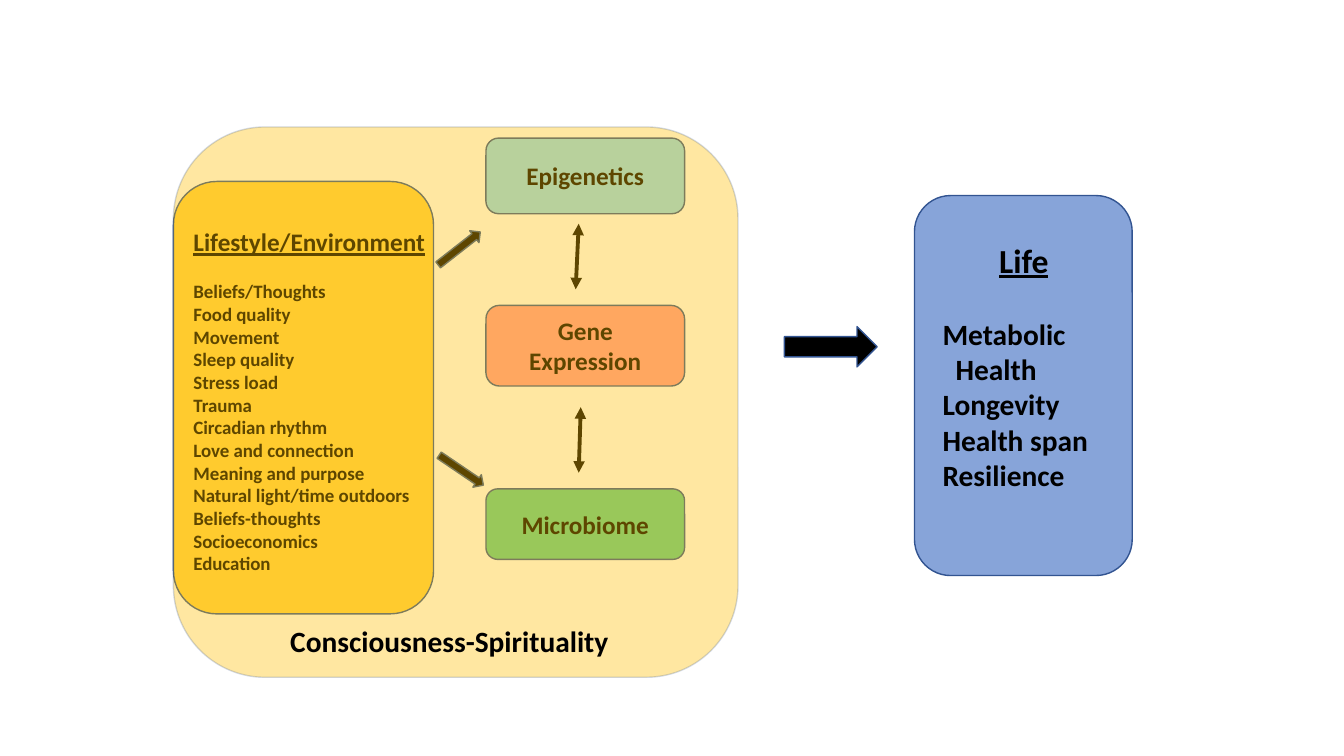
from lxml import etree
from pptx import Presentation
from pptx.dml.color import RGBColor
from pptx.enum import shapes, text
from pptx.oxml import ns
from pptx.util import Inches, Pt

BLACK = RGBColor(0, 0, 0)
NAVY = RGBColor(0x32, 0x54, 0x91)
GOLD = RGBColor(0xFF, 0xC0, 0x00)
SKY = RGBColor(0x00, 0xB0, 0xF0)
RED = RGBColor(0xFF, 0x00, 0x00)
GREEN = RGBColor(0x00, 0xB0, 0x50)
BLUE = RGBColor(0x44, 0x72, 0xC4)

HABITS = [
    "Beliefs/Thoughts", "Food quality", "Movement", "Sleep quality",
    "Stress load", "Trauma", "Circadian rhythm", "Love and connection",
    "Meaning and purpose", "Natural light/time outdoors",
    "Beliefs-thoughts", "Socioeconomics", "Education",
]
GAINS = ["Metabolic", "Health", "Longevity", "Health span", "Resilience"]
STAGES = [
    ("Epigenetics", 1.37, 0.75, SKY, 44),
    ("Gene Expression", 3.03, 0.8, RED, 40),
    ("Microbiome", 4.85, 0.7, GREEN, 63),
]
LINKS = [(5.74, 2.22, 5.71, 2.87), (5.76, 4.04, 5.74, 4.69)]
ARROWS = [
    ((4.29, 2.39, 0.53, 0.15), 322),
    ((4.31, 4.59, 0.53, 0.15), 34.1),
    ((7.78, 3.24, 0.92, 0.4), 0),
]
ROUND = shapes.MSO_SHAPE.ROUNDED_RECTANGLE
ARROW = shapes.MSO_SHAPE.RIGHT_ARROW
LEFT, MID = text.PP_ALIGN.LEFT, text.PP_ALIGN.CENTER


def fade(fill, share):
    """Set the opacity of a solid fill, in percent."""
    for color in fill._xPr.iter(ns.qn("a:srgbClr")):
        if color.getparent().getparent() is fill._xPr:
            etree.SubElement(color, ns.qn("a:alpha"), val=str(share * 1000))


def draw(slide, kind, box, color, share=100, edge=100):
    """Add a filled, outlined shape."""
    shape = slide.shapes.add_shape(kind, *map(Inches, box))
    shape.shadow.inherit = False
    shape.fill.solid()
    shape.fill.fore_color.rgb = color
    shape.line.width = Pt(1)
    shape.line.color.rgb = NAVY
    if share < 100:
        fade(shape.fill, share)
    if edge < 100:
        fade(shape.line.fill, edge)
    return shape


def style(para, size, align=LEFT, under=False):
    """Format a paragraph and its runs."""
    para.alignment = align
    for run in para.runs:
        font = run.font
        font.name, font.size, font.bold = "Calibri", Pt(size), True
        font.underline = under
        font.color.rgb = BLACK


def write(slide, box, lines, size):
    """Add a text box with equal lines."""
    frame = slide.shapes.add_textbox(*map(Inches, box)).text_frame
    frame.word_wrap = True
    frame.text = "\n".join(lines)
    for para in frame.paragraphs:
        style(para, size)
    return frame.paragraphs


def link(slide, ends):
    """Add a line with a head at both ends."""
    line = slide.shapes.add_connector(
        shapes.MSO_CONNECTOR.STRAIGHT, *map(Inches, ends))
    line.line.color.rgb = BLACK
    line.line.width = Pt(2.75)
    pen = line.line._get_or_add_ln()
    for tag in ("a:headEnd", "a:tailEnd"):
        etree.SubElement(pen, ns.qn(tag), type="triangle")
    etree.SubElement(line._element.spPr, ns.qn("a:effectLst"))


def main():
    """Build the slide and save it."""
    deck = Presentation()
    deck.slide_width, deck.slide_height = Inches(13.33), Inches(7.5)
    slide = deck.slides.add_slide(deck.slide_layouts[6])

    draw(slide, ROUND, (1.72, 1.8, 2.58, 4.29), GOLD, 71)
    head, *rest = write(slide, (1.82, 2.2, 2.58, 3.58),
                        ["Lifestyle/Environment"] + HABITS, 13.5)
    style(head, 18, under=True)
    head.space_after = Pt(16.5)

    for name, top, high, color, share in STAGES:
        stage = draw(slide, ROUND, (4.82, top, 1.97, high), color, share)
        frame = stage.text_frame
        frame.word_wrap = True
        frame.vertical_anchor = text.MSO_ANCHOR.MIDDLE
        frame.text = name
        style(frame.paragraphs[0], 18, MID)
    for ends in LINKS:
        link(slide, ends)
    for box, turn in ARROWS:
        draw(slide, ARROW, box, BLACK).rotation = turn

    draw(slide, ROUND, (9.07, 1.94, 2.16, 3.77), BLUE, 64)
    head, *rest = write(slide, (9.25, 2.33, 1.81, 2.63),
                        ["Life"] + GAINS, 21)
    style(head, 24, MID, True)
    head.space_after = Pt(25.6)
    indent = rest[GAINS.index("Health")]._p.get_or_add_pPr()
    indent.set("marL", str(Inches(0.13)))

    draw(slide, ROUND, (1.72, 1.26, 5.6, 5.46), GOLD, 37, 21)
    write(slide, (2.78, 6.13, 3.89, 0.45), ["Consciousness-Spirituality"], 21)
    deck.save("out.pptx")


if __name__ == "__main__":
    main()
